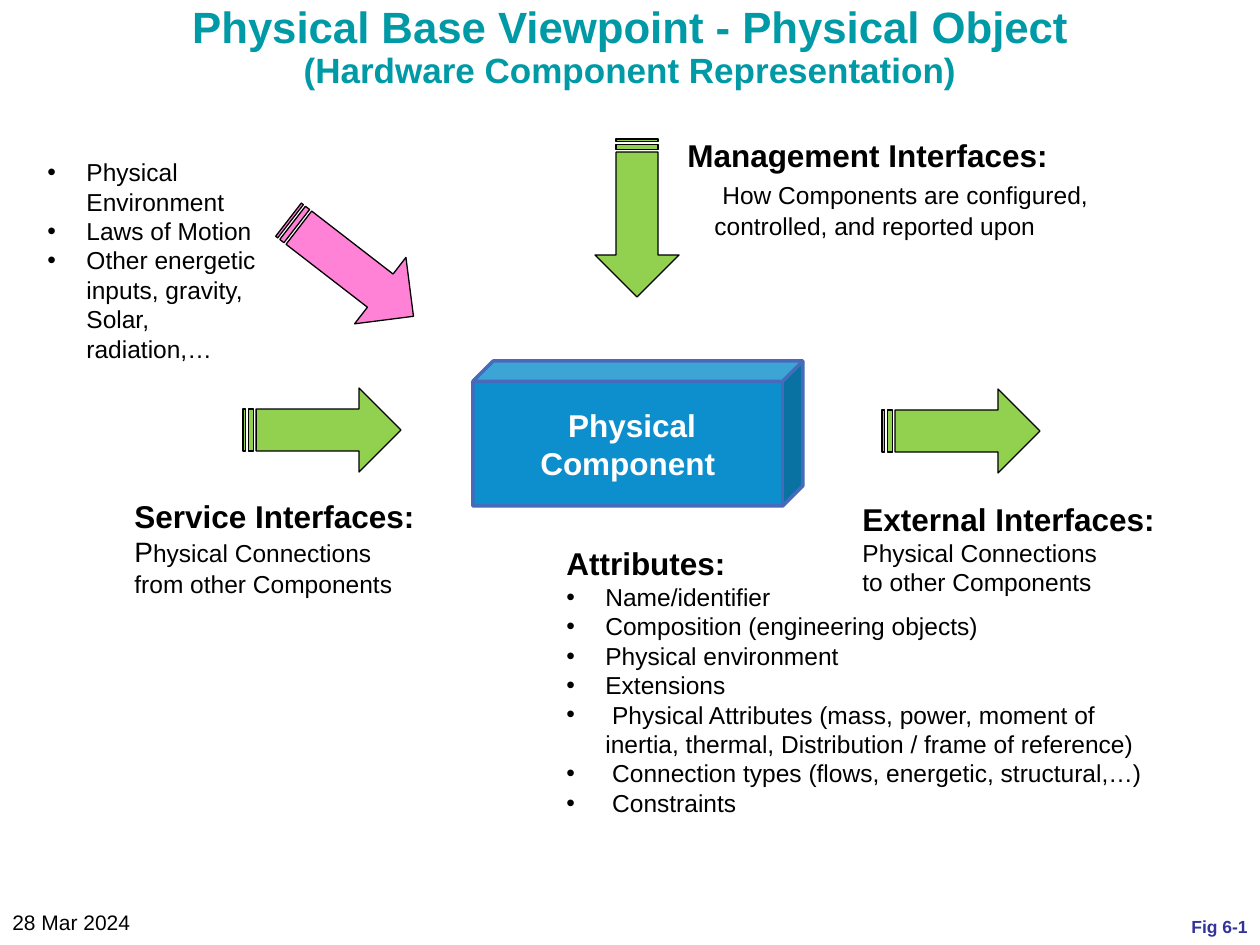
"""Builds the Physical Base Viewpoint slide: a component, its interfaces and attributes."""
from lxml import etree
from pptx import Presentation
from pptx.dml.color import RGBColor
from pptx.enum.shapes import MSO_SHAPE
from pptx.enum.text import MSO_ANCHOR, MSO_AUTO_SIZE, PP_ALIGN
from pptx.oxml.ns import qn
from pptx.util import Emu, Pt

CUBE, ARROW = MSO_SHAPE.CUBE, MSO_SHAPE.STRIPED_RIGHT_ARROW
LEFT, CENTER, RIGHT = PP_ALIGN.LEFT, PP_ALIGN.CENTER, PP_ALIGN.RIGHT
TOP, MIDDLE = MSO_ANCHOR.TOP, MSO_ANCHOR.MIDDLE
GROW, FIXED = MSO_AUTO_SIZE.SHAPE_TO_FIT_TEXT, MSO_AUTO_SIZE.NONE

COLORS = {
    "title": "0099A6", "text": "000000", "white": "FFFFFF", "figure": "333399",
    "cube": "0C8FCC", "cube_edge": "486ABB", "interface": "92D050", "environment": "FF82D6",
}
PX_PER_INCH = 126
BULLET_INDENT = 39
ARROW_SIZE = (158, 84)

HEAD = {"size": 18, "bold": True}
BODY = {"size": 14}
BULLET = {"size": 14, "bullet": True}
TITLE = {"bold": True, "color": "title", "align": CENTER, "spacing": 0.9}

TEXTS = [
    {"box": (0, 903, 262, 63), "lines": [("28 Mar 2024", {"size": 12})]},
    {"box": (63, 0, 1134, 100), "lines": [
        ("Physical Base Viewpoint - Physical Object", {**TITLE, "size": 25}),
        ("(Hardware Component Representation)", {**TITLE, "size": 20}),
    ]},
    {"box": (554, 538, 619, 348), "fit": GROW, "lines": [
        ("Attributes:", HEAD),
        ("Name/identifier", BULLET),
        ("Composition (engineering objects)", BULLET),
        ("Physical environment", BULLET),
        ("Extensions", BULLET),
        (" Physical Attributes (mass, power, moment of inertia, thermal, "
         "Distribution / frame of reference)", BULLET),
        (" Connection types (flows, energetic, structural,…)", BULLET),
        (" Constraints", BULLET),
    ]},
    {"box": (850, 494, 320, 111), "fit": GROW, "wrap": False, "lines": [
        ("External Interfaces:", HEAD),
        ("Physical Connections", BODY),
        ("to other Components", BODY),
    ]},
    {"box": (675, 130, 428, 118), "fit": GROW, "wrap": False, "lines": [
        ("Management Interfaces:", HEAD),
        ("How Components are configured,", {**BODY, "margin": 35, "before": 3.6, "after": 0.9}),
        ("controlled, and reported upon", {**BODY, "margin": 27}),
    ]},
    {"box": (122, 491, 309, 115), "fit": GROW, "wrap": False, "lines": [
        ("Service Interfaces:", HEAD),
        ("Physical Connections", {**BODY, "initial": 16}),
        ("from other Components", BODY),
    ]},
    {"box": (35, 151, 258, 190), "fit": GROW, "lines": [
        ("Physical Environment", BULLET),
        ("Laws of Motion", BULLET),
        ("Other energetic inputs, gravity, Solar, radiation,…", BULLET),
    ]},
    {"box": (1022, 908, 238, 37), "wrap": False, "anchor": MIDDLE, "lines": [
        ("Fig 6-1", {"size": 10, "bold": True, "color": "figure", "align": RIGHT}),
    ]},
]
COMPONENT_BOX = (473, 361, 330, 145)
COMPONENT_LINES = [(" Physical Component", {**HEAD, "color": "white", "align": CENTER})]
ARROWS = [
    ((558, 176), 90, "interface"),
    ((243, 388), 0, "interface"),
    ((882, 389), 0, "interface"),
    ((272, 226), 37.7, "environment"),
]


def px(length):
    return Emu(round(length * 914400 / PX_PER_INCH))


def rgb(name):
    return RGBColor.from_string(COLORS[name])


def write_line(paragraph, text, style):
    initial = style.get("initial")
    if initial:
        paragraph.add_run().text = text[0]
        paragraph.add_run().text = text[1:]
    else:
        paragraph.add_run().text = text
    paragraph.alignment = style.get("align", LEFT)
    if "spacing" in style:
        paragraph.line_spacing = style["spacing"]
    if "before" in style:
        paragraph.space_before = Pt(style["before"])
        paragraph.space_after = Pt(style["after"])
    properties = paragraph._p.get_or_add_pPr()
    if "margin" in style:
        properties.set("marL", str(px(style["margin"])))
    if style.get("bullet"):
        properties.set("marL", str(px(BULLET_INDENT)))
        properties.set("indent", str(-px(BULLET_INDENT)))
        etree.SubElement(properties, qn("a:buFont")).set("typeface", "Arial")
        etree.SubElement(properties, qn("a:buChar")).set("char", "•")
    fonts = [run.font for run in paragraph.runs] if initial else [paragraph.font]
    for font in fonts:
        font.name = "Arial"
        font.size = Pt(style["size"])
        font.bold = style.get("bold", False)
        font.color.rgb = rgb(style.get("color", "text"))
    if initial:
        fonts[0].size = Pt(initial)


def write_lines(frame, lines, anchor=TOP, wrap=True, fit=FIXED):
    frame.word_wrap = wrap
    frame.auto_size = fit
    frame.vertical_anchor = anchor
    for number, (text, style) in enumerate(lines):
        paragraph = frame.add_paragraph() if number else frame.paragraphs[0]
        write_line(paragraph, text, style)


def add_solid(slide, kind, box, fill, edge, weight):
    solid = slide.shapes.add_shape(kind, *map(px, box))
    solid.shadow.inherit = False
    solid.fill.solid()
    solid.fill.fore_color.rgb = rgb(fill)
    solid.line.color.rgb = rgb(edge)
    solid.line.width = Pt(weight)
    return solid


def main():
    deck = Presentation()
    deck.slide_width, deck.slide_height = px(1260), px(945)
    slide = deck.slides.add_slide(deck.slide_layouts[6])
    for entry in TEXTS:
        options = {key: entry[key] for key in ("anchor", "wrap", "fit") if key in entry}
        textbox = slide.shapes.add_textbox(*map(px, entry["box"]))
        write_lines(textbox.text_frame, entry["lines"], **options)
    component = add_solid(slide, CUBE, COMPONENT_BOX, "cube", "cube_edge", 2)
    component.adjustments[0] = 0.14
    write_lines(component.text_frame, COMPONENT_LINES, MIDDLE)
    for corner, angle, fill in ARROWS:
        arrow = add_solid(slide, ARROW, corner + ARROW_SIZE, fill, "text", 0.75)
        arrow.rotation = angle
    deck.save("out.pptx")


if __name__ == "__main__":
    main()
